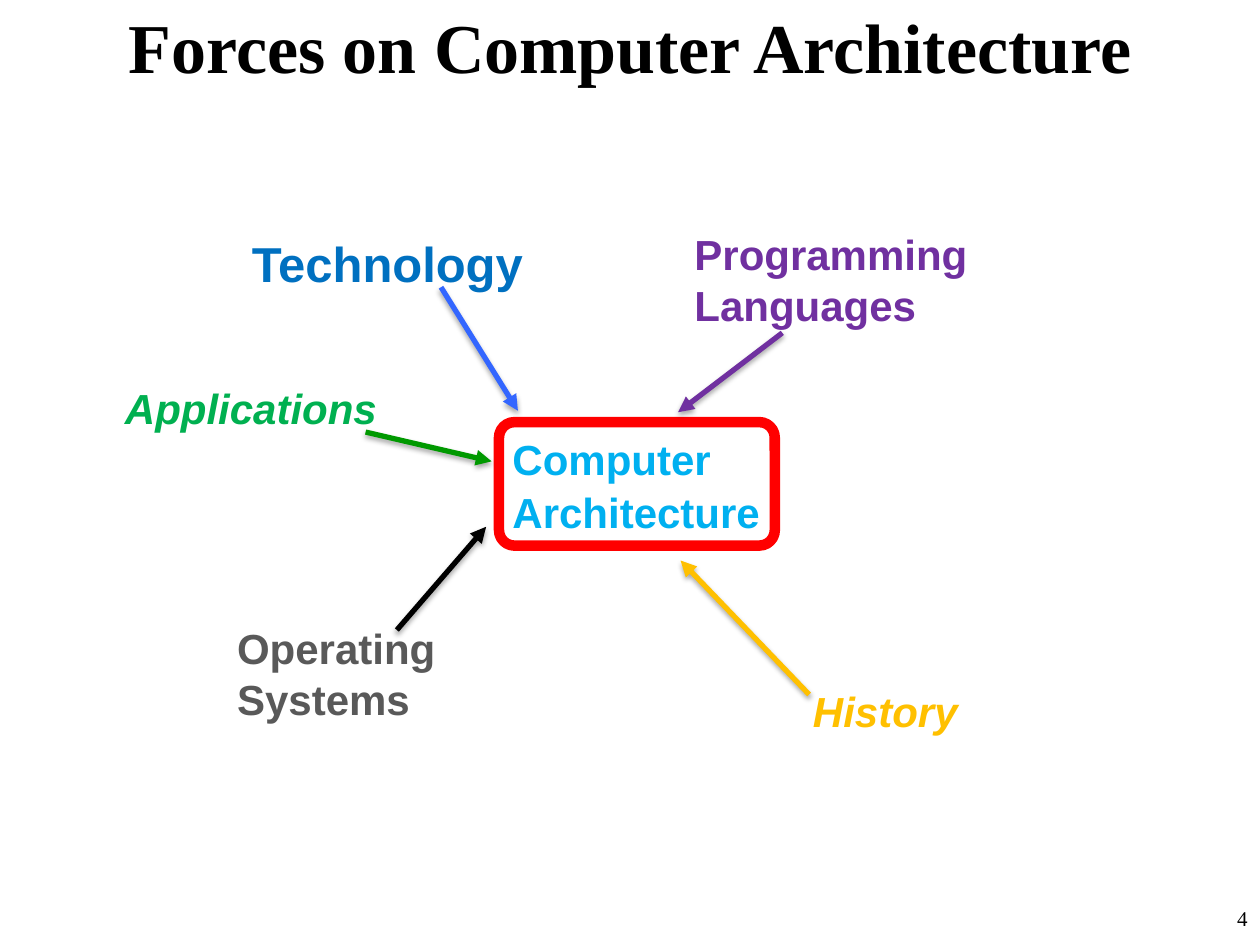
from lxml.etree import SubElement
from pptx import Presentation
from pptx.dml.color import RGBColor
from pptx.enum.shapes import MSO_CONNECTOR, MSO_SHAPE
from pptx.enum.text import MSO_ANCHOR as Anchor, MSO_AUTO_SIZE as Fit, PP_ALIGN as Align
from pptx.oxml import parse_xml
from pptx.oxml.ns import nsdecls, qn
from pptx.util import Cm, Pt

BLACK = RGBColor(0x00, 0x00, 0x00)
RED = RGBColor(0xFF, 0x00, 0x00)
SKY = RGBColor(0x00, 0xB0, 0xF0)
BLUE = RGBColor(0x00, 0x70, 0xC0)
ROYAL = RGBColor(0x33, 0x66, 0xFF)
PURPLE = RGBColor(0x70, 0x30, 0xA0)
GREY = RGBColor(0x59, 0x59, 0x59)
GOLD = RGBColor(0xFF, 0xC0, 0x00)
GREEN = RGBColor(0x00, 0xB0, 0x50)
LEAF = RGBColor(0x00, 0x99, 0x00)

SERIF = "Times New Roman"
SANS = "Arial"
PAD = {"margin_left": Cm(0.18), "margin_right": Cm(0.18),
       "margin_top": Cm(0.08), "margin_bottom": Cm(0.08)}
TIGHT = {**PAD, "word_wrap": False, "auto_size": Fit.SHAPE_TO_FIT_TEXT}

# lines of text, box in cm, line spacing, colour, other font values
FORCES = [
    (["Technology"], (4.9, 4.6, 5.89, 1.3), 1.02, BLUE, {"size": Pt(28)}),
    (["Programming", "Languages"], (13.82, 4.5, 6.15, 2.24), 1.02, PURPLE, {}),
    (["Operating", "Systems"], (4.6, 12.45, 4.62, 2.24), 1.02, GREY, {}),
    (["History"], (16.21, 13.79, 3.3, 1.14), 0.97, GOLD, {"italic": True}),
    (["Applications"], (2.34, 7.62, 5.49, 1.12), 1.02, GREEN, {"italic": True}),
]

# start x, start y, end x, end y in cm, colour
ARROWS = [
    ((7.37, 8.71, 9.91, 9.3), LEAF),
    ((8, 12.7, 9.8, 10.62), BLACK),
    ((8.89, 5.79, 10.44, 8.28), ROYAL),
    ((15.77, 6.71, 13.67, 8.31), PURPLE),
    ((16.31, 14, 13.72, 11.3), GOLD),
]

SHADOW = f"""<a:effectLst {nsdecls('a')}>
  <a:outerShdw blurRad="39370" dist="22860" dir="5400000" rotWithShape="0">
    <a:srgbClr val="000000"><a:alpha val="35000"/></a:srgbClr>
  </a:outerShdw>
</a:effectLst>"""


def apply(item, values):
    for name, value in values.items():
        setattr(item, name, value)


def write(shape, lines, frame, para, font, color):
    """Fill the shape with one paragraph per line, all in one format."""
    text = shape.text_frame
    text.text = "\n".join(lines)
    apply(text, frame)
    for row in text.paragraphs:
        apply(row, para)
        for run in row.runs:
            apply(run.font, font)
            run.font.color.rgb = color


def add_title(slide, words):
    title = slide.shapes.title
    apply(title, {"left": 0, "top": 0, "width": Cm(25.4), "height": Cm(1.85)})
    write(title, [words], {**PAD, "vertical_anchor": Anchor.TOP},
          {"alignment": Align.CENTER},
          {"name": SERIF, "size": Pt(40), "bold": True}, BLACK)


def add_core(slide):
    """Add the red frame that all the forces point at."""
    core = slide.shapes.add_shape(MSO_SHAPE.ROUNDED_RECTANGLE,
                                  *map(Cm, (10.06, 8.51, 5.56, 2.49)))
    core.adjustments[0] = 0.125
    core.shadow.inherit = False
    core.fill.background()
    core.line.color.rgb = RED
    core.line.width = Pt(6)
    write(core, ["Computer", "Architecture"],
          {**TIGHT, "vertical_anchor": Anchor.MIDDLE},
          {"alignment": Align.LEFT, "line_spacing": 1.06},
          {"name": SANS, "size": Pt(24), "bold": True}, SKY)


def add_force(slide, lines, box, space, color, extra):
    label = slide.shapes.add_textbox(*map(Cm, box))
    write(label, lines, TIGHT, {"line_spacing": space},
          {"name": SANS, "size": Pt(24), "bold": True, **extra}, color)


def add_arrow(slide, ends, color):
    arrow = slide.shapes.add_connector(MSO_CONNECTOR.STRAIGHT, *map(Cm, ends))
    arrow.line.color.rgb = color
    arrow.line.width = Pt(3)
    SubElement(arrow.get_or_add_ln(), qn("a:tailEnd"), type="triangle")
    arrow.element.spPr.append(parse_xml(SHADOW))


def add_number(slide, number):
    box = slide.shapes.add_textbox(*map(Cm, (20.12, 18.14, 5.28, 0.91)))
    write(box, [number], {"word_wrap": True}, {"alignment": Align.RIGHT},
          {"name": SERIF, "size": Pt(12)}, BLACK)


def main():
    deck = Presentation()
    apply(deck, {"slide_width": Cm(25.4), "slide_height": Cm(19.05)})
    slide = deck.slides.add_slide(deck.slide_layouts[5])
    add_title(slide, "Forces on Computer Architecture")
    add_core(slide)
    for force in FORCES:
        add_force(slide, *force)
    for arrow in ARROWS:
        add_arrow(slide, *arrow)
    add_number(slide, "4")
    deck.save("out.pptx")


if __name__ == "__main__":
    main()
